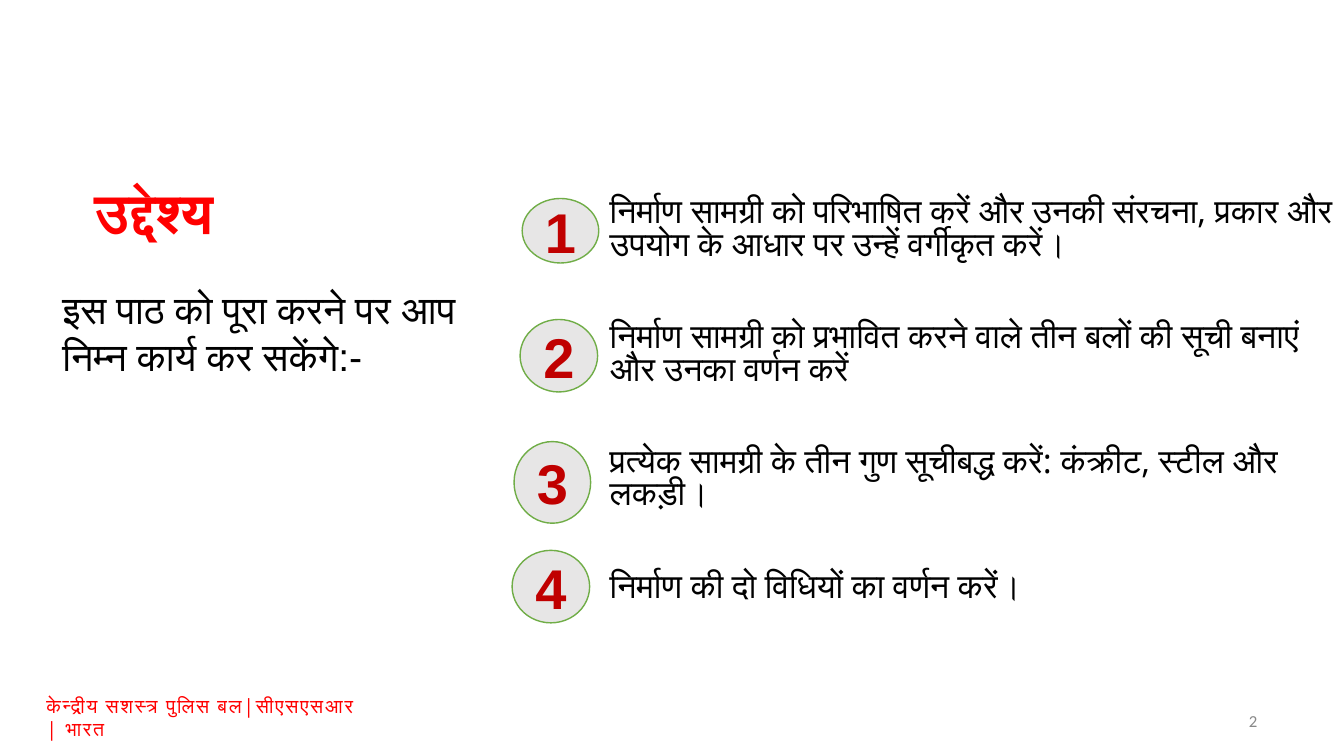
from pptx import Presentation
from pptx.dml.color import RGBColor
from pptx.enum.shapes import MSO_SHAPE
from pptx.enum.text import MSO_ANCHOR, PP_ALIGN
from pptx.util import Pt

COLORS = {
    "red": "FF0000",
    "digit": "C00000",
    "text": "000000",
    "muted": "888888",
    "disc": "E7E6E6",
    "ring": "70AD47",
}
OBJECTIVES = [
    "निर्माण सामग्री को परिभाषित करें और उनकी संरचना, प्रकार और उपयोग के आधार पर उन्हें वर्गीकृत करें।",
    "निर्माण सामग्री को प्रभावित करने वाले तीन बलों की सूची बनाएं और उनका वर्णन करें",
    "प्रत्येक सामग्री के तीन गुण सूचीबद्ध करें: कंक्रीट, स्टील और लकड़ी।",
    "निर्माण की दो विधियों का वर्णन करें।",
]
DISCS = [
    (373, 141.8, 54.7, 46.1),
    (371.5, 228.2, 55.4, 51.8),
    (367.2, 315.4, 54.7, 58.3),
    (365.8, 393.1, 55.4, 51.8),
]


class SlideBuilder:
    def __init__(self, slide, colors):
        self.slide = slide
        self.colors = colors

    def color(self, name):
        return RGBColor.from_string(self.colors[name])

    def fill_text(self, tf, lines, size, color, font="Open Sans", bold=False,
                  align=PP_ALIGN.LEFT, anchor=MSO_ANCHOR.TOP, spacing=None, gap=0):
        tf.word_wrap = True
        tf.vertical_anchor = anchor
        for i, line in enumerate(lines):
            p = tf.paragraphs[0] if i == 0 else tf.add_paragraph()
            p.text = line
            p.alignment = align
            if spacing:
                p.line_spacing = spacing
            if i:
                p.space_before = Pt(gap)
            p.font.size = Pt(size)
            p.font.name = font
            p.font.bold = bold
            p.font.color.rgb = self.color(color)

    def text(self, box, lines, size, color, inset=None, tracking=None, **style):
        tf = self.slide.shapes.add_textbox(*map(Pt, box)).text_frame
        if inset is not None:
            tf.margin_left = tf.margin_right = Pt(inset)
            tf.margin_top = tf.margin_bottom = Pt(inset)
        self.fill_text(tf, lines, size, color, **style)
        if tracking:
            for p in tf.paragraphs:
                for r in p.runs:
                    r._r.get_or_add_rPr().set("spc", str(round(tracking * 100)))

    def disc(self, box, label):
        sp = self.slide.shapes.add_shape(MSO_SHAPE.OVAL, *map(Pt, box))
        sp.shadow.inherit = False
        sp.fill.solid()
        sp.fill.fore_color.rgb = self.color("disc")
        sp.line.color.rgb = self.color("ring")
        sp.line.width = Pt(1)
        self.fill_text(sp.text_frame, [label], 40, "digit", font="Arial", bold=True,
                       align=PP_ALIGN.CENTER, anchor=MSO_ANCHOR.MIDDLE)


def main():
    prs = Presentation()
    prs.slide_width, prs.slide_height = Pt(960), Pt(540)
    s = SlideBuilder(prs.slides.add_slide(prs.slide_layouts[6]), COLORS)

    s.text((30.2, 492.5, 239, 40.3), ["केन्द्रीय सशस्त्र पुलिस बल|सीएसएसआर | भारत"],
           14, "red", inset=2.9, tracking=1.2)
    s.text((60.5, 119.5, 299.5, 68.4), ["उद्देश्य"], 40, "red", bold=True,
           anchor=MSO_ANCHOR.MIDDLE, spacing=0.9)
    s.text((428.4, 137.7, 531.4, 325), OBJECTIVES, 24.1, "text", spacing=0.8, gap=43)
    s.text((884.9, 500.4, 46.8, 28.8), ["2"], 12, "muted", font="Calibri",
           anchor=MSO_ANCHOR.MIDDLE)
    s.text((37.4, 200.2, 323.3, 108.7), ["इस पाठ को पूरा करने पर आप निम्न कार्य कर सकेंगे:-"],
           28, "text", font="Arial")
    for number, box in enumerate(DISCS, 1):
        s.disc(box, str(number))

    prs.save("out.pptx")


if __name__ == "__main__":
    main()
